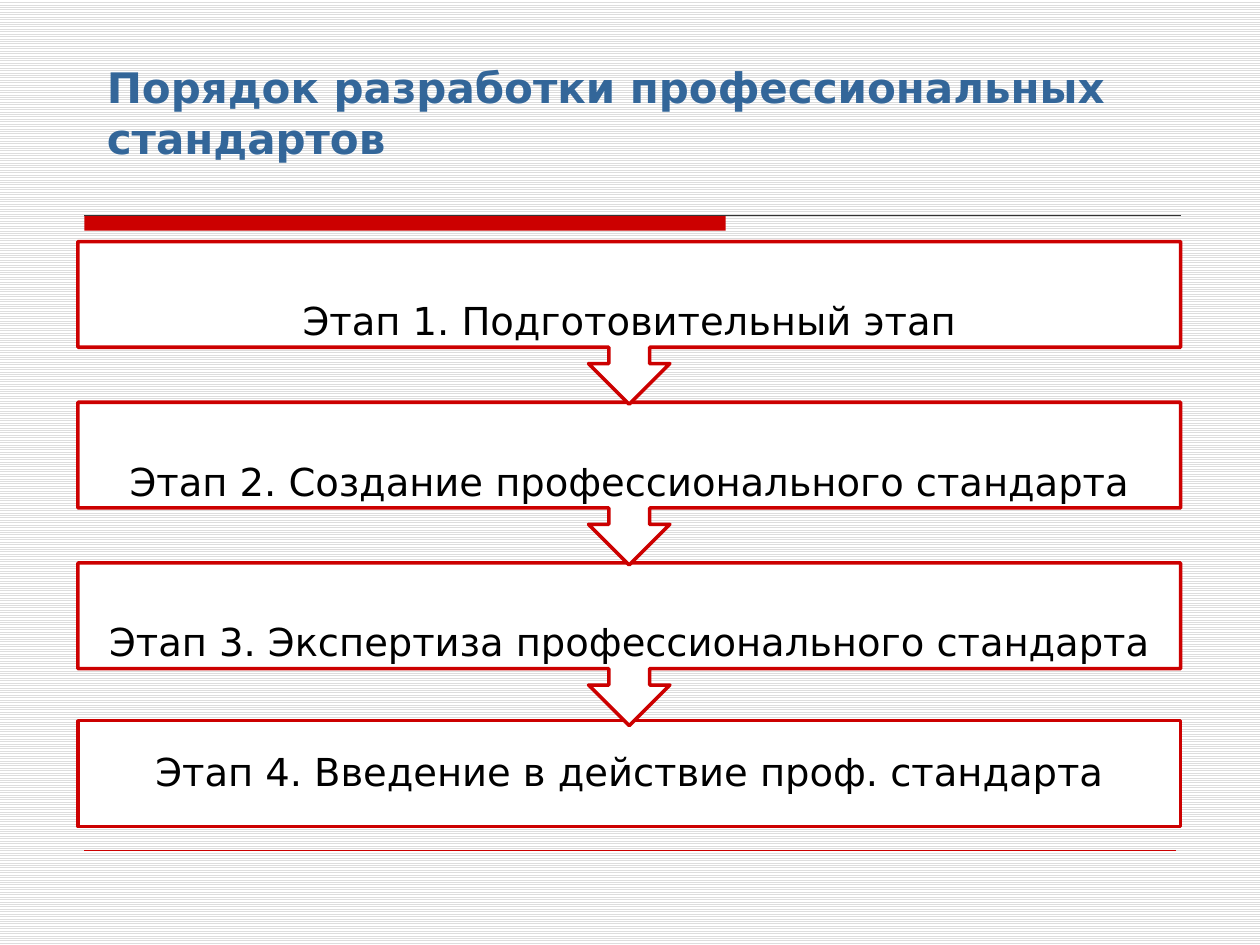
from lxml import etree
from pptx import Presentation
from pptx.dml.color import RGBColor
from pptx.enum.dml import MSO_PATTERN
from pptx.enum.shapes import MSO_CONNECTOR, MSO_SHAPE
from pptx.enum.text import MSO_ANCHOR, MSO_AUTO_SIZE, PP_ALIGN
from pptx.oxml.ns import qn
from pptx.util import Cm, Pt

STRAIGHT = MSO_CONNECTOR.STRAIGHT
RECTANGLE = MSO_SHAPE.RECTANGLE
CALLOUT = MSO_SHAPE.DOWN_ARROW_CALLOUT
STRIPES = MSO_PATTERN.LIGHT_HORIZONTAL
TOP, MIDDLE = MSO_ANCHOR.TOP, MSO_ANCHOR.MIDDLE
LEFT, CENTER = PP_ALIGN.LEFT, PP_ALIGN.CENTER
NO_AUTOFIT = MSO_AUTO_SIZE.NONE

FONT = "DejaVu Sans"
COLORS = {
    "red": "CC0000",
    "blue": "336699",
    "black": "000000",
    "dark": "333333",
    "white": "FFFFFF",
    "stripe": "DDDDDD",
}
TITLE = "Порядок разработки профессиональных стандартов"
STAGES = [
    "Этап 1. Подготовительный этап",
    "Этап 2. Создание профессионального стандарта",
    "Этап 3. Экспертиза профессионального стандарта",
    "Этап 4. Введение в действие проф. стандарта",
]
STAGE_LEFT, STAGE_WIDTH = 1.57, 22.23
FIRST_TOP, STAGE_PITCH, CALLOUT_HEIGHT = 4.87, 3.24, 3.28
LAST_TOP, LAST_HEIGHT = 14.53, 2.13


def color(name):
    return RGBColor.from_string(COLORS[name])


def format_paragraph(paragraph, size, color_name, alignment, bold=False):
    paragraph.alignment = alignment
    paragraph.font.name = FONT
    paragraph.font.size = Pt(size)
    paragraph.font.bold = bold
    paragraph.font.color.rgb = color(color_name)


def set_background(slide):
    fill = slide.background.fill
    fill.patterned()
    fill.pattern = STRIPES
    fill.fore_color.rgb = color("stripe")
    fill.back_color.rgb = color("white")


def add_title(slide):
    title = slide.shapes.title
    title.left, title.top = Cm(1.9), Cm(1.12)
    title.width, title.height = Cm(21.92), Cm(3)
    frame = title.text_frame
    frame.text = TITLE
    frame.word_wrap = True
    frame.auto_size = NO_AUTOFIT
    frame.vertical_anchor = TOP
    format_paragraph(frame.paragraphs[0], 24, "blue", LEFT, bold=True)


def add_rule(slide, top, right, color_name, width):
    rule = slide.shapes.add_connector(STRAIGHT, Cm(1.7), Cm(top), Cm(right), Cm(top))
    rule.line.color.rgb = color(color_name)
    rule.line.width = Pt(width)
    etree.SubElement(rule._element.spPr, qn("a:effectLst"))


def add_block(slide, kind, box, fill_name, line_width=None):
    shape = slide.shapes.add_shape(kind, *(Cm(value) for value in box))
    shape.shadow.inherit = False
    shape.fill.solid()
    shape.fill.fore_color.rgb = color(fill_name)
    if line_width:
        shape.line.color.rgb = color("red")
        shape.line.width = Pt(line_width)
    else:
        shape.line.fill.background()


def add_label(slide, box, text):
    frame = slide.shapes.add_textbox(*(Cm(value) for value in box)).text_frame
    frame.text = text
    frame.word_wrap = True
    frame.vertical_anchor = MIDDLE
    frame.margin_left = frame.margin_right = Cm(0.43)
    frame.margin_top = frame.margin_bottom = Cm(0.43)
    paragraph = frame.paragraphs[0]
    paragraph.line_spacing = 0.9
    format_paragraph(paragraph, 22, "black", CENTER)


def add_stages(slide):
    last = len(STAGES) - 1
    for index in range(last, -1, -1):
        if index == last:
            kind, top, height = RECTANGLE, LAST_TOP, LAST_HEIGHT
        else:
            kind, top, height = CALLOUT, FIRST_TOP + index * STAGE_PITCH, CALLOUT_HEIGHT
        box = (STAGE_LEFT, top, STAGE_WIDTH, height)
        add_block(slide, kind, box, "white", 2)
        add_label(slide, box, STAGES[index])


def main():
    presentation = Presentation()
    presentation.slide_width, presentation.slide_height = Cm(25.4), Cm(19.05)
    slide = presentation.slides.add_slide(presentation.slide_layouts[5])
    set_background(slide)
    add_title(slide)
    add_block(slide, RECTANGLE, (1.7, 4.34, 12.93, 0.31), "red")
    add_rule(slide, 4.34, 23.8, "dark", 0.75)
    add_rule(slide, 17.15, 23.7, "red", 0.25)
    add_stages(slide)
    presentation.save("out.pptx")


if __name__ == "__main__":
    main()
